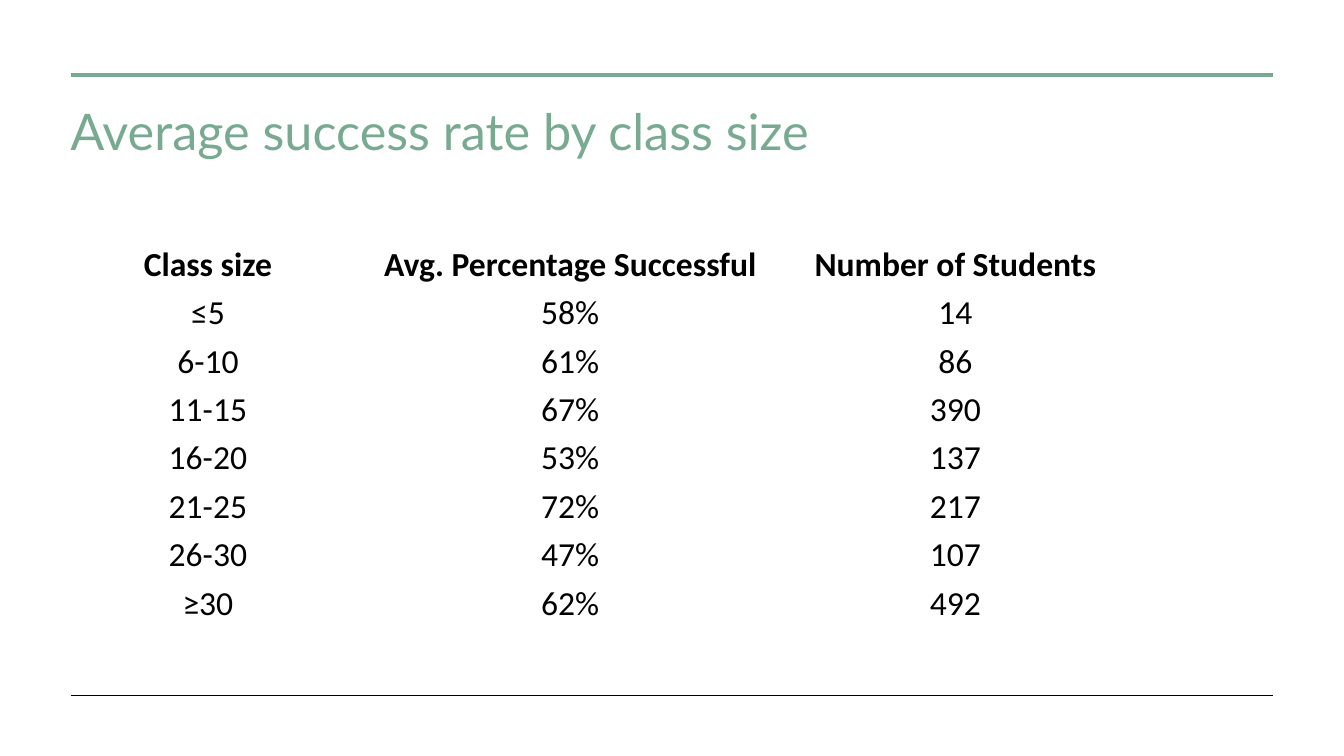
"""Build a slide with a table of average success rates by class size."""
import pptx
import pptx.dml.color
import pptx.enum.shapes
import pptx.enum.text
import pptx.oxml.ns
import pptx.util
from lxml import etree
from pptx.util import Cm

GREEN = pptx.dml.color.RGBColor(0x78, 0xAA, 0x92)
BLACK = pptx.dml.color.RGBColor(0, 0, 0)

TITLE = "Average success rate by class size"
SUCCESS_ROWS = [
    ("Class size", "Avg. Percentage Successful", "Number of Students"),
    ("≤5", "58%", "14"),
    ("6-10", "61%", "86"),
    ("11-15", "67%", "390"),
    ("16-20", "53%", "137"),
    ("21-25", "72%", "217"),
    ("26-30", "47%", "107"),
    ("≥30", "62%", "492"),
]
COLUMN_WIDTHS = [Cm(7.44), Cm(10.82), Cm(8.59)]
HEADER_HEIGHT = Cm(2.44)
ROW_HEIGHT = Cm(1.22)


def add_run(paragraph, text, font_name, size, color, bold=False):
    """Append a formatted run to a paragraph."""
    run = paragraph.add_run()
    run.text = text
    run.font.name = font_name
    run.font.size = pptx.util.Pt(size)
    run.font.color.rgb = color
    run.font.bold = bold


def add_rule(slide, top, color, width):
    """Draw a horizontal rule between the slide margins."""
    rule = slide.shapes.add_connector(
        pptx.enum.shapes.MSO_CONNECTOR.STRAIGHT, Cm(1.78), top, Cm(32.08), top)
    rule.line.color.rgb = color
    rule.line.width = pptx.util.Pt(width)
    properties = rule.element.find(pptx.oxml.ns.qn("p:spPr"))
    etree.SubElement(properties, pptx.oxml.ns.qn("a:effectLst"))


def set_title(slide):
    """Place and format the title placeholder."""
    title = slide.shapes.title
    title.left, title.top = Cm(1.52), Cm(2.64)
    title.width, title.height = Cm(30.53), Cm(3)
    frame = title.text_frame
    frame.vertical_anchor = pptx.enum.text.MSO_ANCHOR.TOP
    frame.word_wrap = True
    paragraph = frame.paragraphs[0]
    paragraph.alignment = pptx.enum.text.PP_ALIGN.LEFT
    paragraph.line_spacing = 0.85
    add_run(paragraph, TITLE, "Lato", 36, GREEN)


def fill_cell(cell, text, bold):
    """Write centred text at the bottom of an unfilled cell."""
    cell.fill.background()
    cell.vertical_anchor = pptx.enum.text.MSO_ANCHOR.BOTTOM
    cell.margin_left = cell.margin_right = cell.margin_top = Cm(0.02)
    cell.margin_bottom = 0
    paragraph = cell.text_frame.paragraphs[0]
    paragraph.alignment = pptx.enum.text.PP_ALIGN.CENTER
    add_run(paragraph, text, "Calibri", 24, BLACK, bold)


def add_success_table(slide):
    """Add the table of success rates."""
    height = HEADER_HEIGHT + ROW_HEIGHT * (len(SUCCESS_ROWS) - 1)
    table = slide.shapes.add_table(
        len(SUCCESS_ROWS), len(COLUMN_WIDTHS),
        Cm(1.52), Cm(4.75), sum(COLUMN_WIDTHS), height).table
    table.horz_banding = False
    for column, width in zip(table.columns, COLUMN_WIDTHS):
        column.width = width
    for row_index, values in enumerate(SUCCESS_ROWS):
        is_header = row_index == 0
        table.rows[row_index].height = HEADER_HEIGHT if is_header else ROW_HEIGHT
        for column_index, text in enumerate(values):
            fill_cell(table.cell(row_index, column_index), text, is_header)


def main():
    """Build and save the presentation."""
    presentation = pptx.Presentation()
    presentation.slide_width = Cm(33.87)
    presentation.slide_height = Cm(19.05)
    slide = presentation.slides.add_slide(presentation.slide_layouts[5])
    add_rule(slide, Cm(1.88), GREEN, 3)
    add_rule(slide, Cm(17.53), BLACK, 0.5)
    set_title(slide)
    add_success_table(slide)
    presentation.save("out.pptx")


if __name__ == "__main__":
    main()
